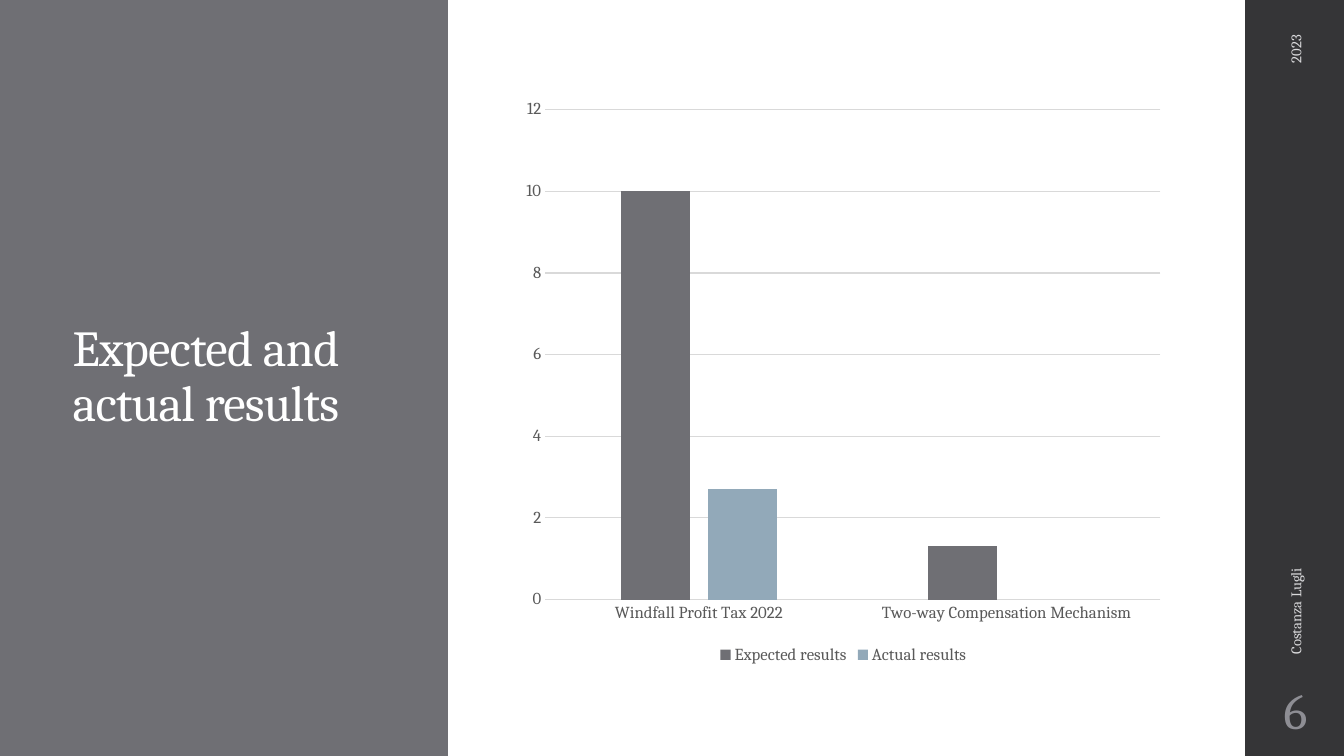
from lxml.etree import SubElement
from pptx import Presentation
from pptx.chart.data import CategoryChartData
from pptx.dml.color import RGBColor
from pptx.enum.chart import XL_CHART_TYPE, XL_LEGEND_POSITION, XL_TICK_MARK
from pptx.enum.shapes import MSO_SHAPE
from pptx.enum.text import MSO_ANCHOR, PP_ALIGN
from pptx.oxml.ns import qn
from pptx.util import Inches, Pt

# Content
TITLE = "Expected and actual results"
CATEGORIES = ["Windfall Profit Tax 2022", "Two-way Compensation Mechanism"]
SERIES = [
    ("Expected results", (10, 1.3), "gray"),
    ("Actual results", (2.7, None), "blue"),
]
FONT = "Cambria"
COLORS = {
    "gray": "6F6F74", "blue": "92A9B9", "dark": "353537", "white": "FFFFFF",
    "footer": "D9D9DB", "number": "8E8E94", "label": "595959", "grid": "D9D9D9",
}

# Layout in inches: title panel, chart area, footer strip
WIDTH, HEIGHT = 13.33, 7.5
PANEL_WIDTH = WIDTH / 3
STRIP_LEFT = 12.35
STRIP_WIDTH = WIDTH - STRIP_LEFT
TITLE_AREA = (0.62, 0.91, 2.97, 5.67)
CHART_AREA = (5.09, 0.88, 6.55, 5.75)
# text, area, rotation, alignment, size, colour
FOOTERS = [
    ("2023", (11.81, 1.09, 2.08, 0.4), 270, PP_ALIGN.RIGHT, 10.5, "footer"),
    ("Costanza Lugli", (10.89, 4.43, 3.92, 0.4), 270, PP_ALIGN.LEFT, 10.5, "footer"),
    ("6", (STRIP_LEFT, 6.75, 1, 0.65), 0, PP_ALIGN.CENTER, 36, "number"),
]


def inches(area):
    return [Inches(length) for length in area]


def color(name):
    return RGBColor.from_string(COLORS[name])


def style_font(font, size, name):
    font.name, font.size = FONT, Pt(size)
    font.color.rgb = color(name)


def add_band(slide, left, width, name):
    band = slide.shapes.add_shape(MSO_SHAPE.RECTANGLE, *inches((left, 0, width, HEIGHT)))
    band.shadow.inherit = False
    band.fill.solid()
    band.fill.fore_color.rgb = color(name)
    band.line.fill.background()
    return band


def add_title(slide):
    title = slide.shapes.title
    title.left, title.top, title.width, title.height = inches(TITLE_AREA)
    frame = title.text_frame
    frame.text = TITLE
    frame.word_wrap = True
    frame.vertical_anchor = MSO_ANCHOR.MIDDLE
    para = frame.paragraphs[0]
    para.alignment, para.line_spacing = PP_ALIGN.LEFT, 0.9
    span = para.runs[0]
    style_font(span.font, 36, "white")
    span.font.element.set("spc", "-50") if hasattr(span.font, "element") else \
        span._r.get_or_add_rPr().set("spc", "-50")
    return title


def add_footer(slide, text, area, rotation, alignment, size, name):
    box = slide.shapes.add_textbox(*inches(area))
    box.rotation = rotation
    frame = box.text_frame
    frame.text = text
    frame.word_wrap = True
    frame.vertical_anchor = MSO_ANCHOR.MIDDLE
    para = frame.paragraphs[0]
    para.alignment, para.space_after = alignment, Pt(6)
    if not rotation:
        para.line_spacing = 0.9
        frame.margin_left = frame.margin_right = Inches(0.05)
    style_font(para.runs[0].font, size, name)


def add_results_chart(slide):
    data = CategoryChartData()
    data.categories = CATEGORIES
    for name, values, _ in SERIES:
        data.add_series(name, values)
    chart = slide.shapes.add_chart(
        XL_CHART_TYPE.COLUMN_CLUSTERED, *inches(CHART_AREA), data).chart
    chart.has_title = False
    style_font(chart.font, 12, "label")

    # Columns
    plot = chart.plots[0]
    plot.gap_width, plot.overlap, plot.vary_by_categories = 219, -27, False
    for series, (_, _, name) in zip(plot.series, SERIES):
        series.format.fill.solid()
        series.format.fill.fore_color.rgb = color(name)

    # Axes and gridlines
    for axis in (chart.category_axis, chart.value_axis):
        axis.major_tick_mark = axis.minor_tick_mark = XL_TICK_MARK.NONE
        style_font(axis.tick_labels.font, 12, "label")
    chart.value_axis.has_major_gridlines = True
    chart.value_axis.format.line.fill.background()
    for line in (chart.category_axis.format.line,
                 chart.value_axis.major_gridlines.format.line):
        line.color.rgb, line.width = color("grid"), Pt(0.75)

    # Legend
    chart.has_legend = True
    chart.legend.position = XL_LEGEND_POSITION.BOTTOM
    chart.legend.include_in_layout = False
    style_font(chart.legend.font, 12, "label")


def main():
    deck = Presentation()
    deck.slide_width, deck.slide_height = inches((WIDTH, HEIGHT))
    page = deck.slides.add_slide(deck.slide_layouts[5])
    panel = add_band(page, 0, PANEL_WIDTH, "gray")
    title = add_title(page)
    title.element.addprevious(panel.element)  # panel lies behind the title
    add_band(page, STRIP_LEFT, STRIP_WIDTH, "dark")
    for footer in FOOTERS:
        add_footer(page, *footer)
    add_results_chart(page)
    deck.save("out.pptx")


if __name__ == "__main__":
    main()
